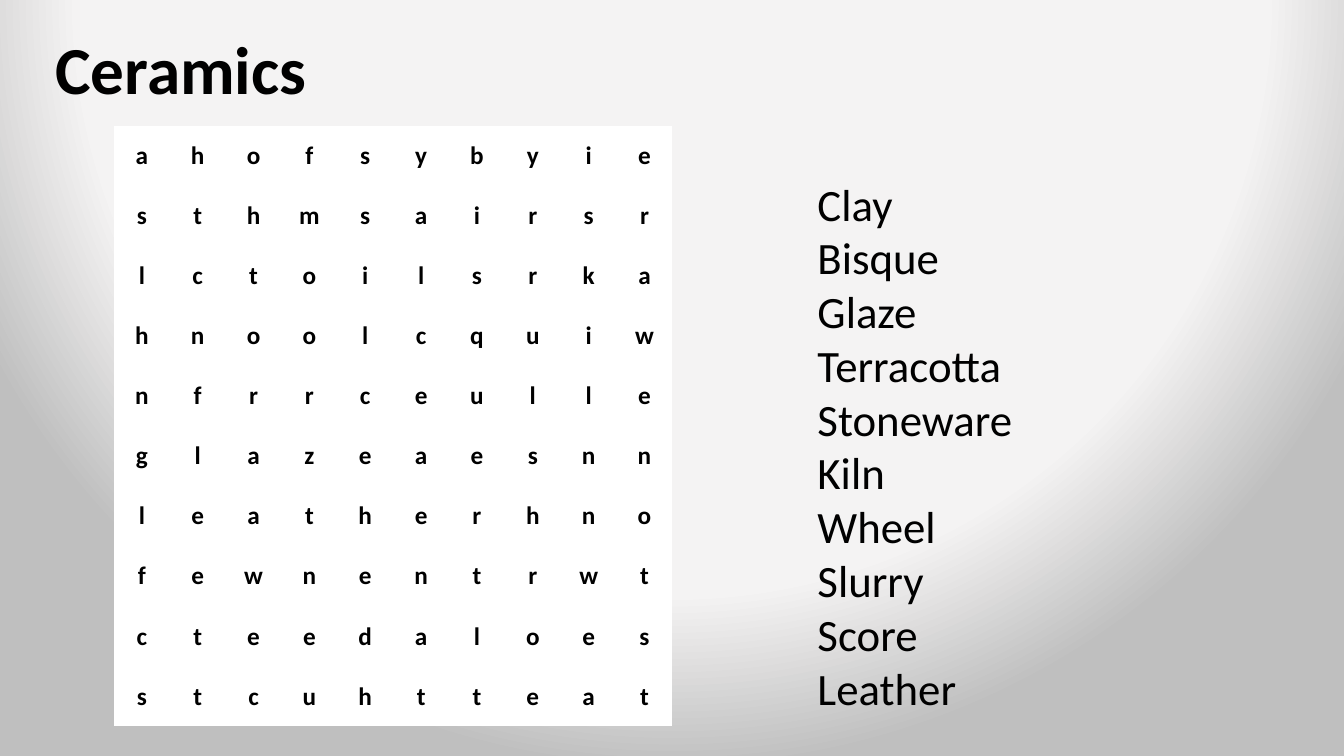
"""Build a ceramics word search slide with its list of words."""
import lxml.etree
import pptx
import pptx.dml.color
import pptx.enum.text
import pptx.oxml.ns
import pptx.util

INCH = pptx.util.Inches
ANCHOR = pptx.enum.text.MSO_ANCHOR
BLACK, WHITE = "000000", "FFFFFF"
NO_STYLE = "{2D5ABB26-0587-4C30-8999-92F81FD0307C}"
LETTERS = [
    "ahofsybyie",
    "sthmsairsr",
    "lctoilsrka",
    "hnoolcquiw",
    "nfrrceulle",
    "glazeaesnn",
    "leatherhno",
    "fewnentrwt",
    "cteedaloes",
    "stcuhtteat",
]
WORDS = ["Clay", "Bisque", "Glaze", "Terracotta", "Stoneware",
         "Kiln", "Wheel", "Slurry", "Score", "Leather"]


def color(code):
    return pptx.dml.color.RGBColor.from_string(code)


def write(para, text, size, bold=False):
    span = para.add_run()
    span.text = text
    span.font.name = "Calibri"
    span.font.size = pptx.util.Pt(size)
    span.font.bold = bold
    span.font.color.rgb = color(BLACK)


deck = pptx.Presentation()
deck.slide_width, deck.slide_height = INCH(13.33), INCH(7.5)
page = deck.slides.add_slide(deck.slide_layouts[6])

backdrop = page.background.fill
backdrop.gradient()
for stop, shade in zip(backdrop.gradient_stops, ["F4F3F3", "BFBFBF"]):
    stop.color.rgb = color(shade)
backdrop.gradient_stops[0].position = 0.77
backdrop.gradient_stops[1].position = 1
qn = pptx.oxml.ns.qn
gradient = page.background._cSld.find(".//" + qn("a:gradFill"))
linear = gradient.find(qn("a:lin"))
radial = lxml.etree.Element(qn("a:path"), {"path": "circle"})
lxml.etree.SubElement(radial, qn("a:fillToRect"),
                      {"l": "10000", "t": "-25000", "r": "10000", "b": "125000"})
gradient.replace(linear, radial)

title = page.shapes.add_textbox(INCH(0.45), 0, INCH(11.5), INCH(1.45)).text_frame
title.word_wrap = True
title.vertical_anchor = ANCHOR.MIDDLE
title.paragraphs[0].line_spacing = 0.9
write(title.paragraphs[0], "Ceramics", 48, bold=True)

word_list = page.shapes.add_textbox(INCH(8.01), INCH(1.7), INCH(5), INCH(5.49)).text_frame
word_list.word_wrap = True
word_list.auto_size = pptx.enum.text.MSO_AUTO_SIZE.SHAPE_TO_FIT_TEXT
for index, word in enumerate(WORDS):
    para = word_list.add_paragraph() if index else word_list.paragraphs[0]
    write(para, word, 32)

puzzle = page.shapes.add_table(len(LETTERS), len(LETTERS[0]), INCH(1.13), INCH(1.25),
                               INCH(5.54), INCH(5.96)).table
puzzle.first_row = puzzle.horz_banding = False
puzzle._tbl.tblPr.find(qn("a:tableStyleId")).text = NO_STYLE
for row, line in enumerate(LETTERS):
    for column, letter in enumerate(line):
        cell = puzzle.cell(row, column)
        cell.fill.solid()
        cell.fill.fore_color.rgb = color(WHITE)
        cell.vertical_anchor = ANCHOR.MIDDLE
        cell.margin_left = cell.margin_right = cell.margin_top = cell.margin_bottom = 0
        para = cell.text_frame.paragraphs[0]
        para.alignment = pptx.enum.text.PP_ALIGN.CENTER
        write(para, letter, 18, bold=True)

deck.save("out.pptx")
